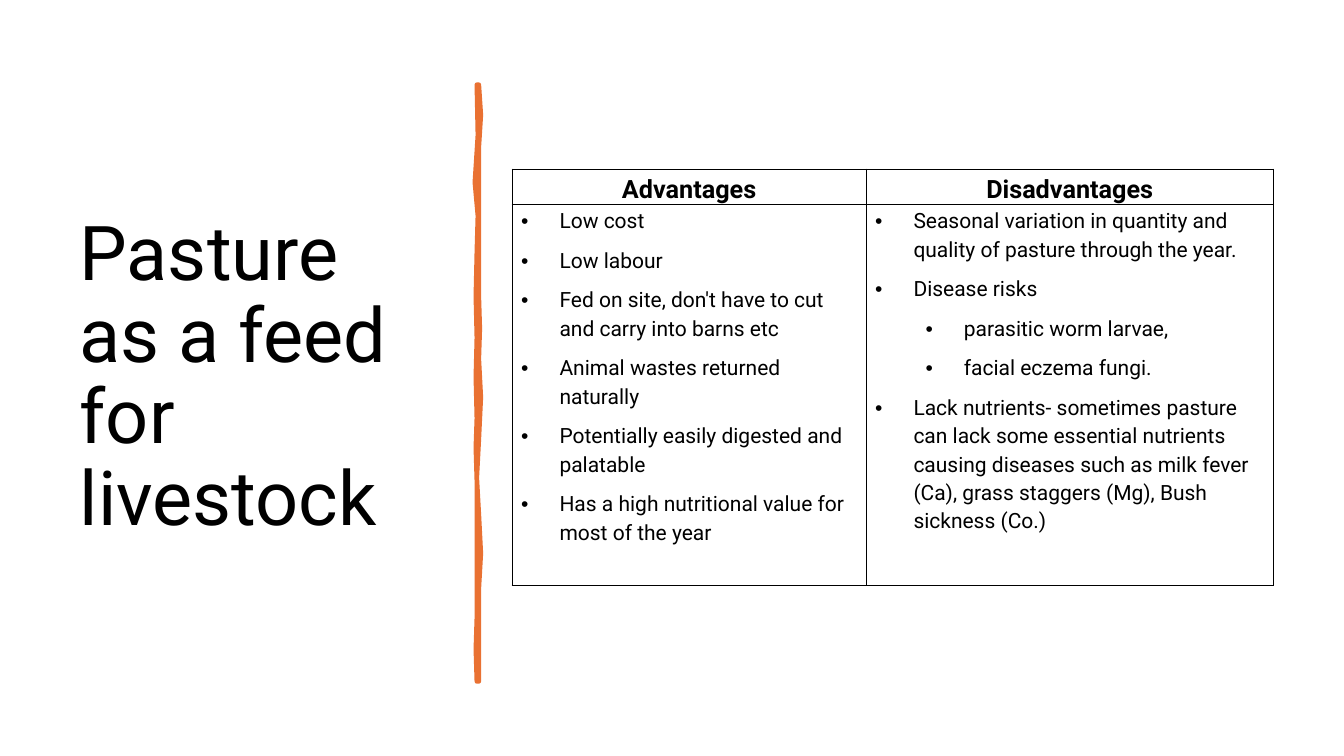
from lxml import etree
from pptx import Presentation
from pptx.dml.color import RGBColor
from pptx.enum.text import MSO_ANCHOR as Anchor, MSO_AUTO_SIZE as AutoSize, PP_ALIGN as Align
from pptx.oxml.ns import qn
from pptx.util import Inches, Pt

FONT = "Roboto"
BLACK, ORANGE = "000000", "E97132"
TITLE_BOX = (0.69, 0.7, 3.74, 6.11)
DIVIDER_BOX = (4.73, 0.84, 0.02, 5.92)
TABLE_BOX = (5.08, 1.68, 7.55, 4.13)
COLUMN_SHARES = (0.465, 0.535)
HEADER_HEIGHT = 0.35
BULLET_INDENT, LEVEL_STEP = 0.38, 0.5

# Each column: heading, then (level, text) items
COLUMNS = [
    ("Advantages", [
        (0, "Low cost"),
        (0, "Low labour"),
        (0, "Fed on site, don't have to cut and carry into barns etc"),
        (0, "Animal wastes returned naturally"),
        (0, "Potentially easily digested and palatable"),
        (0, "Has a high nutritional value for most of the year"),
    ]),
    ("Disadvantages", [
        (0, "Seasonal variation in quantity and quality of pasture through the year."),
        (0, "Disease risks"),
        (1, "parasitic worm larvae,"),
        (1, "facial eczema fungi."),
        (0, "Lack nutrients- sometimes pasture can lack some essential nutrients causing "
            "diseases such as milk fever (Ca), grass staggers (Mg), Bush sickness (Co.)"),
    ]),
]

# Edges of the hand-drawn divider: (distance from its top, sideways bulge)
RIGHT_EDGE = [(0, 0), (0.3, 0.02), (0.62, 0), (1.42, 0), (2.1, 0), (2.42, 0.01), (2.72, 0),
              (3.1, 0.02), (3.52, 0), (3.9, -0.02), (4.26, 0), (4.65, 0.02), (5, 0), (5.92, 0)]
LEFT_EDGE = [(5.92, 0), (5.6, -0.01), (5.29, 0), (4.73, 0), (3.93, 0), (3.6, -0.01), (3.31, 0),
             (2.9, -0.01), (2.51, 0), (2.1, -0.01), (1.66, 0), (1.3, 0.01), (0.97, -0.02),
             (0.5, 0.01), (0, 0)]


def color(value):
    return RGBColor.from_string(value)


def inches(box):
    return [Inches(length) for length in box]


def write(paragraph, text, size, bold=False, align=Align.LEFT, spacing=1.15, after=0, fill=BLACK):
    run = paragraph.add_run()
    run.text = text
    run.font.name, run.font.size, run.font.bold = FONT, Pt(size), bold
    run.font.color.rgb = color(fill)
    paragraph.alignment, paragraph.line_spacing = align, spacing
    paragraph.space_before, paragraph.space_after = Pt(0), Pt(after)


def add_bullet(paragraph, level):
    paragraph.level = level
    properties = paragraph._p.get_or_add_pPr()
    properties.set("marL", str(Inches(BULLET_INDENT + level * LEVEL_STEP)))
    properties.set("indent", str(-Inches(BULLET_INDENT)))
    etree.SubElement(properties, qn("a:buFont")).set("typeface", "Arial")
    etree.SubElement(properties, qn("a:buChar")).set("char", "•")


def set_borders(cell):
    properties = cell._tc.get_or_add_tcPr()
    for position, side in enumerate(("lnL", "lnR", "lnT", "lnB")):
        line = etree.Element(qn(f"a:{side}"), w=str(Pt(1)))
        fill = etree.SubElement(line, qn("a:solidFill"))
        etree.SubElement(fill, qn("a:srgbClr")).set("val", BLACK)
        properties.insert(position, line)


def add_title(slide, box):
    title = slide.shapes.title
    title.left, title.top, title.width, title.height = inches(box)
    frame = title.text_frame
    frame.auto_size, frame.word_wrap = AutoSize.NONE, True
    frame.vertical_anchor = Anchor.MIDDLE
    write(frame.paragraphs[0], "Pasture as a feed for livestock", 54, spacing=0.9)


def add_divider(slide, box):
    left, top, width, _ = box
    points = [(left + width + bulge, top + y) for y, bulge in RIGHT_EDGE]
    points += [(left + bulge, top + y) for y, bulge in LEFT_EDGE]
    points = [(Inches(x), Inches(y)) for x, y in points]
    builder = slide.shapes.build_freeform(*points[0])
    builder.add_line_segments(points[1:], close=True)
    divider = builder.convert_to_shape()
    divider.shadow.inherit = False
    divider.fill.solid()
    divider.fill.fore_color.rgb = color(ORANGE)
    divider.line.color.rgb = color(ORANGE)
    divider.line.width = Pt(3.25)
    etree.SubElement(divider.line._get_or_add_ln(), qn("a:round"))


def add_comparison(slide, box):
    table = slide.shapes.add_table(2, len(COLUMNS), *inches(box)).table
    table.first_row = table.horz_banding = False
    table.rows[0].height = Inches(HEADER_HEIGHT)
    table.rows[1].height = Inches(box[3] - HEADER_HEIGHT)
    for index, (heading, items) in enumerate(COLUMNS):
        table.columns[index].width = Inches(box[2] * COLUMN_SHARES[index])
        header, body = table.cell(0, index), table.cell(1, index)
        for cell in (header, body):
            cell.fill.background()
            cell.margin_left = cell.margin_right = Inches(0.09)
            cell.margin_top, cell.margin_bottom = Inches(0.01), 0
            set_borders(cell)
        write(header.text_frame.paragraphs[0], heading, 18, bold=True, align=Align.CENTER)
        frame = body.text_frame
        for number, (level, text) in enumerate(items):
            paragraph = frame.add_paragraph() if number else frame.paragraphs[0]
            write(paragraph, text, 15, after=8)
            add_bullet(paragraph, level)


def main():
    presentation = Presentation()
    presentation.slide_width, presentation.slide_height = Inches(13.33), Inches(7.5)
    slide = presentation.slides.add_slide(presentation.slide_layouts[5])
    add_title(slide, TITLE_BOX)
    add_divider(slide, DIVIDER_BOX)
    add_comparison(slide, TABLE_BOX)
    presentation.save("out.pptx")


if __name__ == "__main__":
    main()
